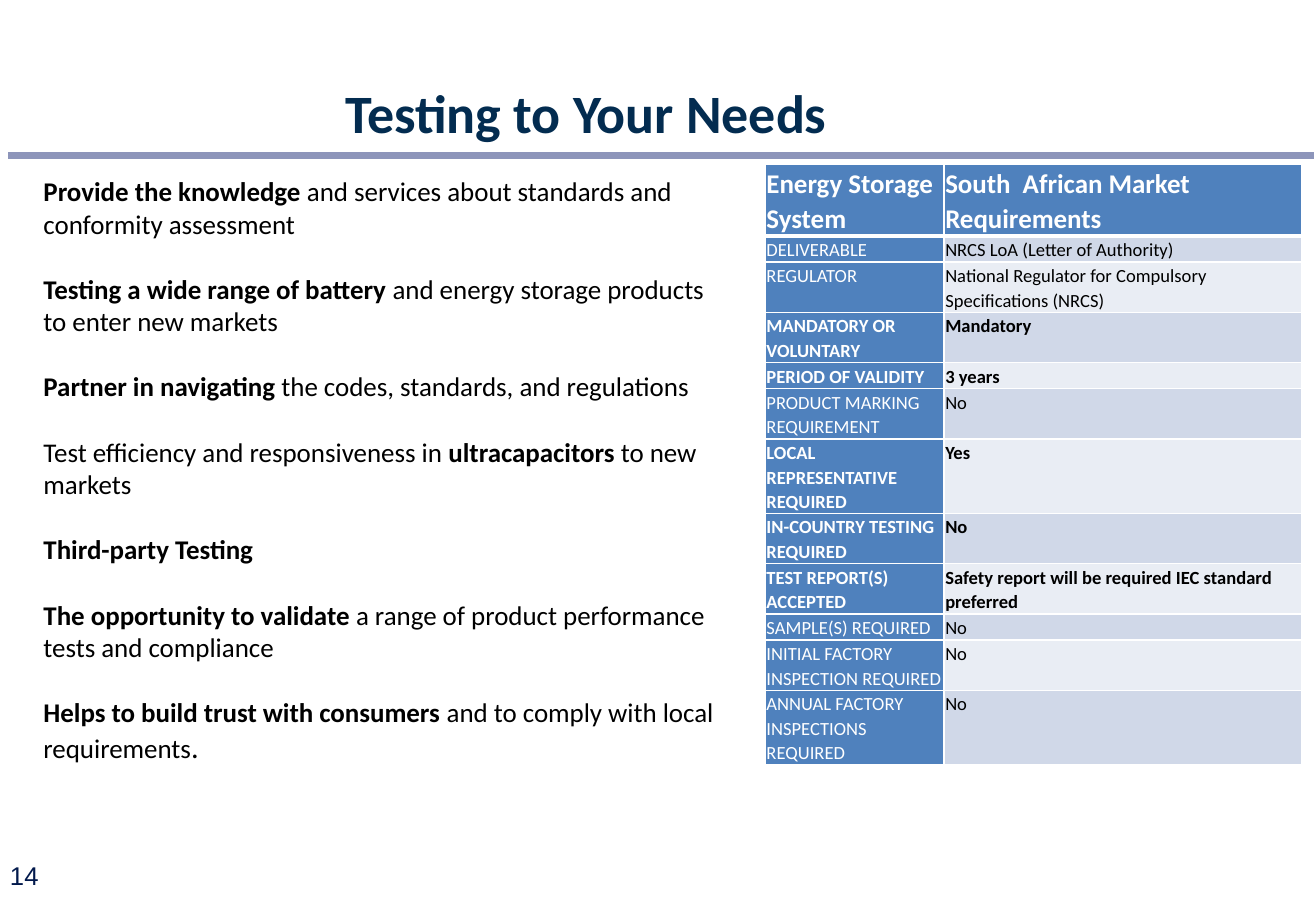
from lxml.etree import SubElement
from pptx import Presentation
from pptx.dml.color import RGBColor
from pptx.enum.shapes import MSO_CONNECTOR, MSO_SHAPE
from pptx.enum.text import MSO_ANCHOR, PP_ALIGN
from pptx.oxml.ns import qn
from pptx.util import Pt

WHITE, BLACK, NAVY = "FFFFFF", "000000", "032C50"
RULE, NUMBER, HEADER = "8D95BA", "02194C", "4F81BD"
BANDS = ["D0D8E8", "E9EDF4"]

SERVICES = [
    [("Provide the knowledge ", True),
     ("and services about standards and conformity assessment", False)],
    [("Testing a wide range of battery ", True),
     ("and energy storage products to enter new markets", False)],
    [("Partner in navigating ", True), ("the codes, standards, and regulations", False)],
    [("Test efficiency and responsiveness in ", False), ("ultracapacitors ", True),
     ("to new markets", False)],
    [("Third-party Testing", True)],
    [("The opportunity to validate ", True),
     ("a range of product performance tests and compliance", False)],
    [("Helps to build trust with consumers ", True),
     ("and to comply with local requirements", False), (".", False, 18)],
]

HEADINGS = ("Energy Storage System", "South  African Market Requirements")
REQUIREMENTS = [
    ("DELIVERABLE", "NRCS LoA (Letter of Authority)", False, 1),
    ("REGULATOR", "National Regulator for Compulsory Specifications (NRCS)", False, 2),
    ("MANDATORY OR VOLUNTARY", "Mandatory", True, 2),
    ("PERIOD OF VALIDITY", "3 years", True, 1),
    ("PRODUCT MARKING REQUIREMENT", "No", False, 2),
    ("LOCAL REPRESENTATIVE REQUIRED", "Yes", True, 3),
    ("IN-COUNTRY TESTING REQUIRED", "No", True, 2),
    ("TEST REPORT(S) ACCEPTED", "Safety report will be required IEC standard preferred", True, 2),
    ("SAMPLE(S) REQUIRED", "No", False, 1),
    ("INITIAL FACTORY INSPECTION REQUIRED", "No", False, 2),
    ("ANNUAL FACTORY INSPECTIONS REQUIRED", "No", False, 3),
]


def color(value):
    return RGBColor.from_string(value)


class SlideBuilder:
    font_name = "Calibri"

    def __init__(self, presentation):
        self.slide = presentation.slides.add_slide(presentation.slide_layouts[5])

    def style(self, font, size, fill, bold=None, name=None):
        font.name = name or self.font_name
        font.size = Pt(size)
        font.color.rgb = color(fill)
        font.bold = bold

    def title(self, text, left, top, width, height):
        shape = self.slide.shapes.title
        shape.left, shape.top, shape.width, shape.height = map(Pt, (left, top, width, height))
        frame = shape.text_frame
        frame.text = text
        frame.vertical_anchor = MSO_ANCHOR.MIDDLE
        frame.paragraphs[0].alignment = PP_ALIGN.CENTER
        self.style(frame.paragraphs[0].font, 32, NAVY, True)

    def rule(self, left, right, y):
        line = self.slide.shapes.add_connector(
            MSO_CONNECTOR.STRAIGHT, Pt(left), Pt(y), Pt(right), Pt(y))
        line.line.color.rgb = color(RULE)
        line.line.width = Pt(4.5)
        SubElement(line._element.spPr, qn("a:effectLst"))

    def page_number(self, text, left, top, width, height):
        shape = self.slide.shapes.add_shape(
            MSO_SHAPE.OVAL, Pt(left), Pt(top), Pt(width), Pt(height))
        shape.shadow.inherit = False
        shape.fill.solid()
        shape.fill.fore_color.rgb = color(WHITE)
        shape.line.fill.background()
        frame = shape.text_frame
        frame.word_wrap = False
        frame.margin_top = frame.margin_bottom = 0
        frame.vertical_anchor = MSO_ANCHOR.MIDDLE
        frame.text = text
        frame.paragraphs[0].alignment = PP_ALIGN.CENTER
        self.style(frame.paragraphs[0].font, 15.2, NUMBER, name="Arial")

    def text(self, paragraphs, left, top, width, height, gap):
        frame = self.slide.shapes.add_textbox(
            Pt(left), Pt(top), Pt(width), Pt(height)).text_frame
        frame.word_wrap = True
        for index, parts in enumerate(paragraphs):
            paragraph = frame.add_paragraph() if index else frame.paragraphs[0]
            paragraph.space_before = Pt(gap if index else 0)
            self.style(paragraph.font, 16, BLACK)
            for text, bold, *size in parts:
                run = paragraph.add_run()
                run.text = text
                run.font.bold = bold
                if size:
                    run.font.size = Pt(size[0])

    def border(self, cell, side, width):
        line = SubElement(cell._tc.get_or_add_tcPr(), qn(f"a:ln{side}"), w=str(Pt(width)))
        fill = SubElement(line, qn("a:solidFill"))
        SubElement(fill, qn("a:srgbClr"), val=WHITE)

    def cell(self, cell, text, fill, size, font_color, bold, bottom=1):
        for side, width in zip("LRTB", (1, 1, 1, bottom)):
            self.border(cell, side, width)
        cell.fill.solid()
        cell.fill.fore_color.rgb = color(fill)
        cell.margin_left = cell.margin_right = Pt(0.7)
        cell.margin_top = cell.margin_bottom = Pt(0.7)
        cell.text = text
        paragraph = cell.text_frame.paragraphs[0]
        paragraph.line_spacing = 1.07
        paragraph.space_after = Pt(8)
        self.style(paragraph.font, size, font_color, bold)

    def table(self, headings, rows, left, top, widths):
        heights = [42] + [1.2 + 14.3 * lines for *_, lines in rows]
        table = self.slide.shapes.add_table(
            len(heights), len(widths), Pt(left), Pt(top),
            Pt(sum(widths)), Pt(sum(heights))).table
        for column, width in zip(table.columns, widths):
            column.width = Pt(width)
        for row, height in zip(table.rows, heights):
            row.height = Pt(height)
        for column, heading in enumerate(headings):
            self.cell(table.cell(0, column), heading, HEADER, 16, WHITE, True, bottom=3)
        for index, (label, value, bold, _) in enumerate(rows):
            self.cell(table.cell(index + 1, 0), label, HEADER, 11, WHITE, bold)
            self.cell(table.cell(index + 1, 1), value, BANDS[index % 2], 11, BLACK, bold)


def main():
    presentation = Presentation()
    presentation.slide_width, presentation.slide_height = Pt(780), Pt(540)
    builder = SlideBuilder(presentation)
    builder.rule(5, 779, 92.2)
    builder.page_number("14", -8.6, 497.5, 46, 42.5)
    builder.title("Testing to Your Needs ", 0, 44.6, 702, 43.2)
    builder.text(SERVICES, 18.7, 100, 421, 378, gap=19.5)
    builder.table(HEADINGS, REQUIREMENTS, 453.6, 97.4, (106, 212.2))
    presentation.save("out.pptx")


if __name__ == "__main__":
    main()
